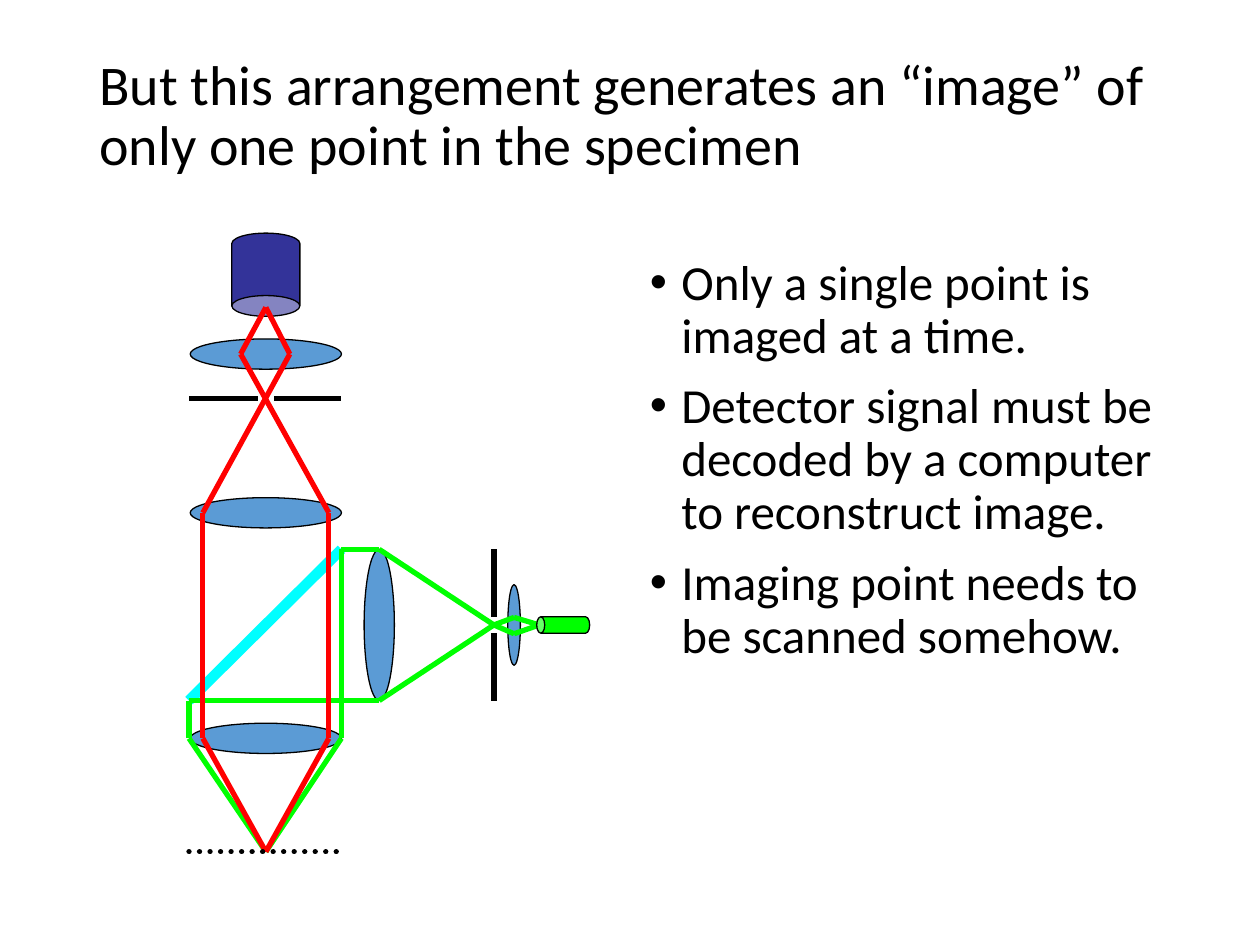
from itertools import pairwise
from lxml.etree import SubElement as Sub
from pptx import Presentation
from pptx.dml.color import RGBColor as RGB
from pptx.enum.dml import MSO_LINE_DASH_STYLE as Dash
from pptx.enum.shapes import MSO_CONNECTOR as Conn, MSO_SHAPE as Kind
from pptx.enum.text import MSO_ANCHOR as Anchor
from pptx.oxml.ns import qn
from pptx.util import Inches, Pt

TITLE = "But this arrangement generates an “image” of only one point in the specimen"
POINTS = [
    "Only a single point is imaged at a time.",
    "Detector signal must be decoded by a computer to reconstruct image.",
    "Imaging point needs to be scanned somehow.",
]
FONT = "Calibri"
HUE = {
    "ink": "000000", "lens": "5B9BD5", "sensor": "333399",
    "laser": "00FF00", "glow": "FF0000", "mirror": "00FFFF",
}

# Columns and rows of the light path, in inches
COL = {
    "left": 1.5, "inl": 1.61, "nearl": 1.91, "axis": 2.11, "nearr": 2.3,
    "inr": 2.61, "right": 2.71, "lens": 3.01, "slit": 3.92, "small": 4.08,
    "tip": 4.28, "laser": 4.47,
}
ROW = {
    "sensor": 2.18, "face": 2.44, "top": 2.81, "slit": 3.16, "tube": 4.07,
    "high": 4.36, "up": 4.9, "beam": 4.96, "down": 5.03, "low": 5.56,
    "goal": 5.86, "spot": 6.76,
}
HOLE = 0.065  # half the pinhole

# column, row, width, height, turn
LENSES = [
    ("axis", "top", 0.24, 1.2, 90),
    ("small", "beam", 0.1, 0.64, 180),
    ("axis", "goal", 0.24, 1.2, 90),
    ("axis", "tube", 0.24, 1.2, 90),
    ("lens", "beam", 0.24, 1.2, 180),
]
SENSOR = ("axis", "sensor", 0.54, 0.66, 180)
LASER = ("laser", "beam", 0.13, 0.42, 270)
RAYS = [
    ("laser", "tip beam, small up, slit beam, lens low, left low, left goal, axis spot"),
    ("laser", "tip beam, small down, slit beam, lens high, right high, right goal, axis spot"),
    ("glow", "axis spot, inr goal, inr tube, nearl top, axis face"),
    ("glow", "axis spot, inl goal, inl tube, nearr top, axis face"),
]

deck = Presentation()
deck.slide_width, deck.slide_height = Inches(10), Inches(7.5)
slide = deck.slides.add_slide(deck.slide_layouts[6])
shapes = slide.shapes


def spot(name):
    col, row = name.split()
    return COL[col], ROW[row]


def part(kind, place, hue, adj=None):
    """Add a filled shape centred on a grid point."""
    col, row, wide, high, turn = place
    item = shapes.add_shape(
        kind, Inches(COL[col] - wide / 2), Inches(ROW[row] - high / 2),
        Inches(wide), Inches(high))
    item.rotation = turn
    item.shadow.inherit = False
    item.fill.solid()
    item.fill.fore_color.rgb = RGB.from_string(HUE[hue])
    item.line.color.rgb = RGB.from_string(HUE["ink"])
    item.line.width = Pt(0.75)
    if adj:
        item.adjustments[0] = adj


def line(start, end, hue, width=3):
    item = shapes.add_connector(Conn.STRAIGHT, *map(Inches, (*start, *end)))
    item.line.color.rgb = RGB.from_string(HUE[hue])
    item.line.width = Pt(width)
    Sub(item._element.spPr, qn("a:effectLst"))
    return item


def text(box, lines, size, bullet=False):
    frame = shapes.add_textbox(*map(Inches, box)).text_frame
    frame.word_wrap = True
    frame.vertical_anchor = Anchor.TOP
    for i, words in enumerate(lines):
        para = frame.add_paragraph() if i else frame.paragraphs[0]
        para.line_spacing = 0.9
        if bullet:
            para.space_before = Pt(10)
            props = para._p.get_or_add_pPr()
            props.set("marL", str(Inches(0.25)))
            props.set("indent", str(-Inches(0.25)))
            Sub(props, qn("a:buFont"), typeface="Arial")
            Sub(props, qn("a:buChar"), char="•")
        run = para.add_run()
        run.text = words
        run.font.name, run.font.size = FONT, Pt(size)
        run.font.color.rgb = RGB.from_string(HUE["ink"])


for lens in LENSES:
    part(Kind.OVAL, lens, "lens")

x, y = spot("axis slit")
line((COL["left"], y), (x - HOLE, y), "ink")
line((x + HOLE, y), (COL["right"], y), "ink")
x, y = spot("slit beam")
line((x, ROW["high"]), (x, y - HOLE), "ink")
line((x, y + HOLE), (x, ROW["low"]), "ink")
line(spot("right high"), spot("left low"), "mirror", 6)

part(Kind.CAN, SENSOR, "sensor", 0.304)
for hue, route in RAYS:
    for start, end in pairwise(route.split(", ")):
        line(spot(start), spot(end), hue)
part(Kind.CAN, LASER, "laser", 0.488)

dots = line(spot("left spot"), spot("right spot"), "ink").line
dots.dash_style = Dash.ROUND_DOT
dots._get_or_add_ln().set("cap", "rnd")

text((0.69, 0.4, 8.62, 1.45), [TITLE], 32)
text((5.06, 2, 4.25, 4.76), POINTS, 28, bullet=True)

deck.save("out.pptx")
